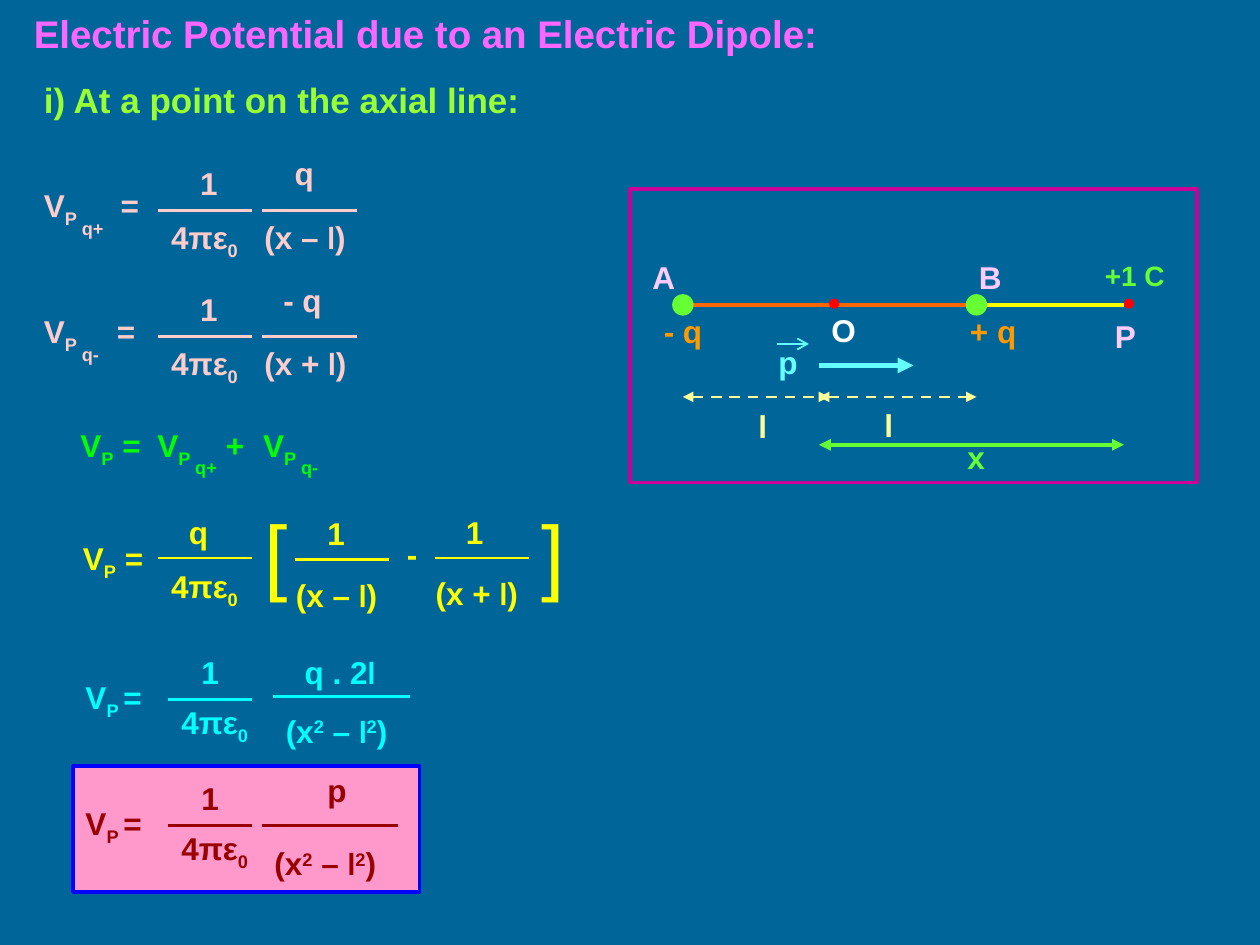
from dataclasses import dataclass

from lxml.etree import SubElement
from pptx import Presentation
from pptx.dml.color import RGBColor
from pptx.enum.dml import MSO_LINE
from pptx.enum.shapes import MSO_CONNECTOR, MSO_SHAPE
from pptx.enum.text import MSO_AUTO_SIZE
from pptx.oxml.ns import qn
from pptx.util import Inches, Pt

COLORS = {
    "background": "006699", "title": "FF66FF", "subtitle": "99FF33",
    "charge": "66FF33", "charge_label": "FF9900", "point": "FF0000",
    "point_label": "FFCCFF", "white": "FFFFFF", "axis": "FF6600",
    "frame": "CC0099", "half_length": "FFFF99", "moment": "66FFFF",
    "terms": "FFCCCC", "sum": "00FF00", "expanded": "FFFF00",
    "combined": "00FFFF", "result": "990000",
    "result_fill": "FF99CC", "result_line": "0000FF",
}


@dataclass(frozen=True)
class Run:
    text: str
    baseline: int = 0
    font: str = "Arial"


@dataclass(frozen=True)
class Label:
    text: str | list[Run]
    left: float
    top: float
    width: float


@dataclass(frozen=True)
class Fraction:
    left: float
    y: float
    width: float
    numerator: Label
    denominator: Label


def sub(text: str) -> Run:
    return Run(text, -25)


ELL = Run("l", font="Calibri")
SQUARED = Run("2", 30)
FOUR_PI_EPS = [Run("4πε"), sub("0")]
X_MINUS_L = [Run("(x – "), ELL, Run(")")]
X_PLUS_L = [Run("(x + "), ELL, Run(")")]
X2_MINUS_L2 = [Run("(x"), SQUARED, Run(" – "), ELL, SQUARED, Run(")")]
V_P_EQUALS = [Run("V"), sub("P"), Run(" =")]


def v_p_charge(sign: str) -> list[Run]:
    return [Run("V"), sub("P "), Run(f"q{sign}", -56)]


def rgb(name: str) -> RGBColor:
    return RGBColor.from_string(COLORS[name])


def add_text(s, label: Label, *, color: str, size: float = 18, bold: bool = True,
             height: float = 0.4, wrap: bool = True) -> None:
    box = s.shapes.add_textbox(Inches(label.left), Inches(label.top),
                               Inches(label.width), Inches(height))
    tf = box.text_frame
    tf.word_wrap = wrap
    tf.auto_size = MSO_AUTO_SIZE.SHAPE_TO_FIT_TEXT
    p = tf.paragraphs[0]
    runs = [Run(label.text)] if isinstance(label.text, str) else label.text
    for run in runs:
        r = p.add_run()
        r.text = run.text
        r.font.name, r.font.size, r.font.bold = run.font, Pt(size), bold
        r.font.color.rgb = rgb(color)
        if run.baseline:
            r.font._element.set("baseline", str(run.baseline * 1000))


def add_line(s, x1: float, x2: float, y: float, *, color: str, width: float = 1.5,
             dashed: bool = False, head: str = "", tail: str = "") -> None:
    """Draw a horizontal line; head is the arrow at x1 and tail the one at x2."""
    line = s.shapes.add_connector(MSO_CONNECTOR.STRAIGHT, Inches(x1), Inches(y),
                                  Inches(x2), Inches(y))
    line.line.color.rgb = rgb(color)
    line.line.width = Pt(width)
    if dashed:
        line.line.dash_style = MSO_LINE.DASH
    sp_pr = line._element.spPr
    for tag, arrow in (("a:headEnd", head), ("a:tailEnd", tail)):
        if arrow:
            SubElement(sp_pr.find(qn("a:ln")), qn(tag)).set("type", arrow)
    SubElement(sp_pr, qn("a:effectLst"))


def add_preset(s, kind: MSO_SHAPE, left: float, top: float, width: float, height: float,
               *, fill: str = "", line: str = "") -> None:
    sp = s.shapes.add_shape(kind, Inches(left), Inches(top), Inches(width), Inches(height))
    sp.shadow.inherit = False
    if fill:
        sp.fill.solid()
        sp.fill.fore_color.rgb = rgb(fill)
    else:
        sp.fill.background()
    if line:
        sp.line.color.rgb = rgb(line)
        sp.line.width = Pt(2.25)
    else:
        sp.line.fill.background()


def add_dot(s, x: float, y: float, diameter: float, color: str) -> None:
    """Draw a filled circle centred on (x, y)."""
    add_preset(s, MSO_SHAPE.OVAL, x - diameter / 2, y - diameter / 2,
               diameter, diameter, fill=color)


def add_fraction(s, fraction: Fraction, color: str) -> None:
    add_line(s, fraction.left, fraction.left + fraction.width, fraction.y, color=color)
    add_text(s, fraction.numerator, color=color)
    add_text(s, fraction.denominator, color=color)


def add_diagram(s) -> None:
    axis_y = 2.42
    add_preset(s, MSO_SHAPE.RECTANGLE, 5, 1.5, 4.5, 2.33, line="frame")
    add_line(s, 7.83, 8.92, axis_y, color="expanded", width=2.25)
    add_line(s, 5.5, 7.67, axis_y, color="axis", width=2.25)
    for x in (5.42, 7.75):
        add_dot(s, x, axis_y, 0.17, "charge")
    for x in (6.62, 8.96):
        add_dot(s, x, 2.41, 0.08, "point")

    for x1, x2 in ((6.5, 7.75), (5.42, 6.58)):
        add_line(s, x1, x2, 3.15, color="half_length", dashed=True,
                 head="triangle", tail="triangle")
    add_line(s, 6.5, 8.92, 3.53, color="charge", width=2.25,
             head="triangle", tail="triangle")
    add_line(s, 6.5, 7.25, 2.9, color="moment", width=3, tail="triangle")
    add_line(s, 6.17, 6.42, 2.73, color="moment", width=1, tail="arrow")

    for label, color in (
        (Label("A", 5.08, 2, 0.42), "point_label"),
        (Label("B", 7.67, 2, 0.42), "point_label"),
        (Label("P", 8.75, 2.47, 0.33), "point_label"),
        (Label("O", 6.5, 2.42, 0.42), "white"),
        (Label("- q", 5.17, 2.43, 0.57), "charge_label"),
        (Label("+ q", 7.6, 2.43, 0.57), "charge_label"),
        (Label("p", 6.08, 2.67, 0.42), "moment"),
        (Label("l", 5.92, 3.18, 0.33), "half_length"),
        (Label("l", 6.92, 3.17, 0.33), "half_length"),
        (Label("x", 7.58, 3.43, 0.25), "charge"),
    ):
        add_text(s, label, color=color)
    add_text(s, Label("+1 C", 8.67, 2, 0.75), color="charge", size=16, height=0.37)


def add_charge_terms(s) -> None:
    for y, sign, equals_left, charge, bottom in (
        (1.67, "+", 0.86, Label("q", 2.24, 1.17, 0.43), X_MINUS_L),
        (2.67, "-", 0.83, Label("- q", 2.15, 2.18, 0.51), X_PLUS_L),
    ):
        add_text(s, Label(v_p_charge(sign), 0.25, y - 0.24, 0.8), color="terms")
        add_text(s, Label("=", equals_left, y - 0.24, 0.4), color="terms")
        add_fraction(s, Fraction(1.25, y, 0.75, Label("1", 1.49, y - 0.42, 0.43),
                                 Label(FOUR_PI_EPS, 1.26, y + 0.01, 0.82)), "terms")
        add_fraction(s, Fraction(2.08, y, 0.75, charge,
                                 Label(bottom, 2, y + 0.01, 1)), "terms")


def add_sum(s) -> None:
    for label in (
        Label(V_P_EQUALS, 0.54, 3.33, 0.8),
        Label(v_p_charge("+") + [Run(" +")], 1.15, 3.33, 1),
        Label(v_p_charge("-"), 1.99, 3.33, 0.9),
    ):
        add_text(s, label, color="sum")


def add_expanded_sum(s) -> None:
    color = "expanded"
    add_text(s, Label(V_P_EQUALS, 0.56, 4.23, 0.79), color=color)
    for fraction in (
        Fraction(1.25, 4.43, 0.75, Label("q", 1.4, 4.02, 0.43),
                 Label(FOUR_PI_EPS, 1.26, 4.45, 0.82)),
        Fraction(2.34, 4.44, 0.75, Label("1", 2.5, 4.03, 0.43),
                 Label(X_MINUS_L, 2.25, 4.52, 1)),
        Fraction(3.45, 4.43, 0.75, Label("1", 3.6, 4.02, 0.43),
                 Label(X_PLUS_L, 3.36, 4.51, 1)),
    ):
        add_fraction(s, fraction, color)
    add_text(s, Label("-", 3.13, 4.2, 0.28), color=color, wrap=False)
    for bracket, left in (("[", 2), ("]", 4.2)):
        add_text(s, Label(bracket, left, 3.93, 0.39), color=color, size=48,
                 bold=False, height=0.9, wrap=False)


def add_final_forms(s) -> None:
    add_preset(s, MSO_SHAPE.RECTANGLE, 0.58, 6.08, 2.75, 1,
               fill="result_fill", line="result_line")
    q_2l = Label([Run("q . 2"), ELL], 2.32, 5.13, 0.85)
    for y, color, right in (
        (5.55, "combined", Fraction(2.17, 5.53, 1.08, q_2l,
                                    Label(X2_MINUS_L2, 2.17, 5.6, 1.17))),
        (6.55, "result", Fraction(2.08, 6.55, 1.08, Label("p", 2.5, 6.07, 0.33),
                                  Label(X2_MINUS_L2, 2.08, 6.65, 1.17))),
    ):
        add_text(s, Label([Run("V"), sub("P "), Run("=")], 0.58, y - 0.22, 0.75), color=color)
        add_fraction(s, Fraction(1.33, y, 0.67, Label("1", 1.5, y - 0.42, 0.42),
                                 Label(FOUR_PI_EPS, 1.34, y - 0.02, 0.82)), color)
        add_fraction(s, right, color)


def main() -> None:
    prs = Presentation()
    prs.slide_width, prs.slide_height = Inches(10), Inches(7.5)
    s = prs.slides.add_slide(prs.slide_layouts[6])
    s.background.fill.solid()
    s.background.fill.fore_color.rgb = rgb("background")
    add_text(s, Label("Electric Potential due to an Electric Dipole:", 0.17, 0.03, 6.5),
             color="title", size=22, height=0.47)
    add_text(s, Label("i) At a point on the axial line:", 0.25, 0.57, 4),
             color="subtitle", size=20, height=0.43)
    add_diagram(s)
    add_charge_terms(s)
    add_sum(s)
    add_expanded_sum(s)
    add_final_forms(s)
    prs.save("out.pptx")


if __name__ == "__main__":
    main()
